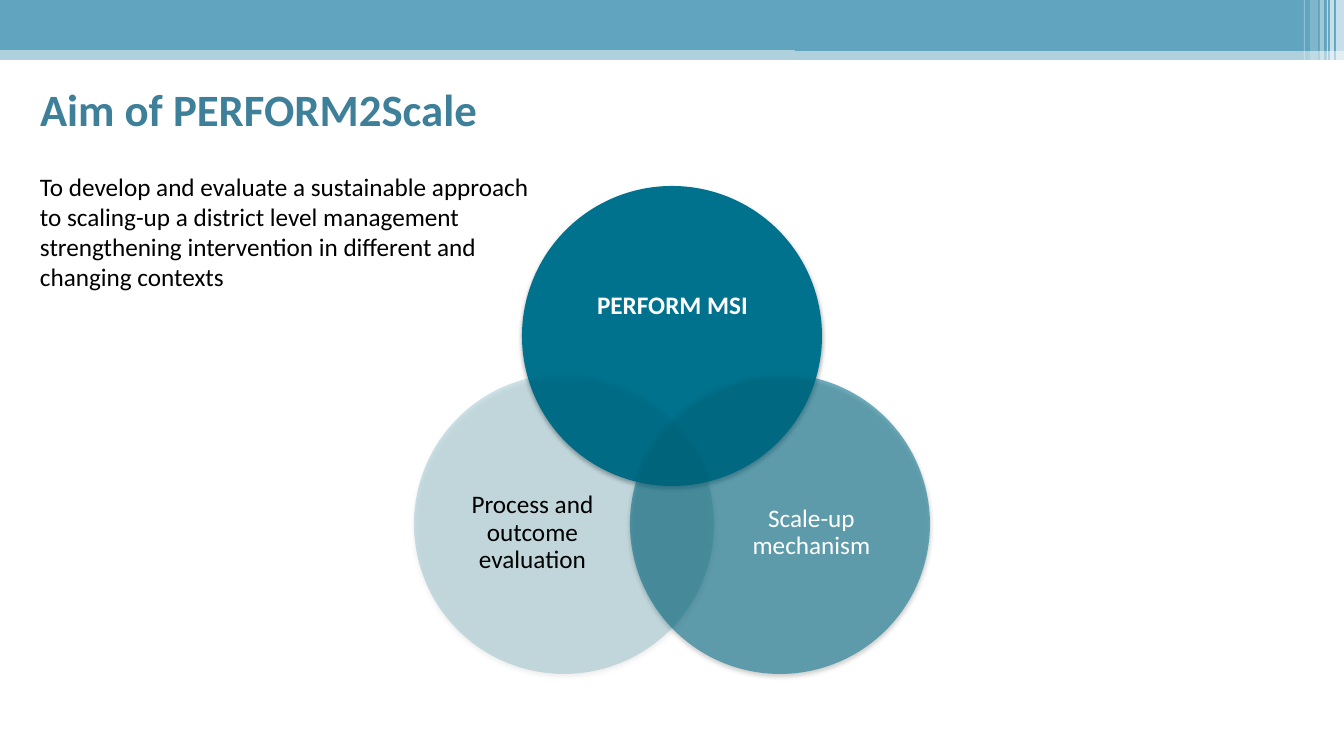
"""Build the slide on the aim of PERFORM2Scale with its three overlapping circles."""
from dataclasses import dataclass

from lxml.etree import SubElement
from pptx import Presentation
from pptx.dml.color import RGBColor
from pptx.enum.shapes import MSO_SHAPE as Preset
from pptx.enum.text import MSO_ANCHOR as Anchor, PP_ALIGN as Align
from pptx.oxml.ns import qn
from pptx.util import Emu, Pt

EMU_PER_PX = 914400 / 100.8
WIDTH, HEIGHT = 1344, 756


@dataclass(frozen=True)
class Theme:
    font: str = "Calibri"
    band: str = "61A4BF"
    circle: str = "01728D"
    title: str = "3E7F9A"
    dark: str = "000000"
    light: str = "FFFFFF"
    title_size: int = 32
    body_size: int = 18


def px(length):
    return Emu(round(length * EMU_PER_PX))


def set_all(target, values):
    for name, value in values.items():
        setattr(target, name, value)


class SlideBuilder:
    def __init__(self, slide, theme):
        self.slide = slide
        self.theme = theme

    def shape(self, preset, box, color, opacity=100):
        shape = self.slide.shapes.add_shape(preset, *map(px, box))
        shape.shadow.inherit = False
        shape.line.fill.background()
        shape.fill.solid()
        shape.fill.fore_color.rgb = RGBColor.from_string(color)
        if opacity < 100:
            fill_color = shape._element.spPr.find(".//" + qn("a:srgbClr"))
            SubElement(fill_color, qn("a:alpha"), val=str(opacity * 1000))
        return shape

    def bar(self, box, color, opacity=100):
        self.shape(Preset.RECTANGLE, box, color, opacity)

    def circle(self, left, top, diameter, opacity):
        box = (left, top, diameter, diameter)
        shape = self.shape(Preset.OVAL, box, self.theme.circle, opacity)
        effects = shape._element.spPr.find(qn("a:effectLst"))
        shadow = SubElement(effects, qn("a:outerShdw"), blurRad=str(Pt(3.1)),
                            dist=str(Pt(1.8)), dir="5400000", rotWithShape="0")
        shadow_color = SubElement(shadow, qn("a:srgbClr"), val=self.theme.dark)
        SubElement(shadow_color, qn("a:alpha"), val="35000")

    def fill_text(self, shape, box, text, color, size, bold=False,
                  align=Align.LEFT, anchor=Anchor.TOP, spacing=1.0):
        set_all(shape, dict(zip(("left", "top", "width", "height"), map(px, box))))
        frame = shape.text_frame
        set_all(frame, {"word_wrap": True, "vertical_anchor": anchor,
                        "margin_left": 0, "margin_right": 0,
                        "margin_top": 0, "margin_bottom": 0})
        frame.text = text
        paragraph = frame.paragraphs[0]
        set_all(paragraph, {"alignment": align, "line_spacing": spacing,
                            "space_before": Pt(0)})
        font = paragraph.runs[0].font
        set_all(font, {"name": self.theme.font, "size": Pt(size), "bold": bold})
        font.color.rgb = RGBColor.from_string(color)

    def title(self, box, text):
        self.fill_text(self.slide.shapes.title, box, text, self.theme.title,
                       self.theme.title_size, bold=True)

    def text(self, box, text, color, **style):
        shape = self.slide.shapes.add_textbox(*map(px, box))
        self.fill_text(shape, box, text, color, self.theme.body_size, **style)

    def label(self, box, text, color, bold=False):
        self.text(box, text, color, bold=bold, align=Align.CENTER,
                  anchor=Anchor.MIDDLE, spacing=0.9)


def main():
    presentation = Presentation()
    set_all(presentation, {"slide_width": px(WIDTH), "slide_height": px(HEIGHT)})
    slide = presentation.slides.add_slide(presentation.slide_layouts[5])
    theme = Theme()
    builder = SlideBuilder(slide, theme)

    builder.bar((0, 50, WIDTH, 10), theme.band, 50)
    for box in ((0, 0, WIDTH, 34), (0, 34, WIDTH, 16), (795, 41, 549, 10)):
        builder.bar(box, theme.band)
    stripes = ((1336, 8, 69, 65), (1330, 4, 69, 65), (1327, 1, 69, 60),
               (1320, 4, 69, 40), (1310, 8, 65, 20), (1304, 1, 65, 30))
    for left, width, height, opacity in stripes:
        builder.bar((left, 0, width, height), theme.light, opacity)

    diameter, shift = 300, 108
    middle = (WIDTH - diameter) // 2
    builder.circle(middle, 186, diameter, 100)
    builder.label((595, 259, 155, 95), "PERFORM MSI", theme.light, bold=True)
    lower_circles = (
        (shift, 55, 748, "Scale-up mechanism", theme.light),
        (-shift, 19, 469, "Process and outcome evaluation", theme.dark),
    )
    for offset, opacity, label_left, text, color in lower_circles:
        builder.circle(middle + offset, 374, diameter, opacity)
        builder.label((label_left, 475, 127, 116), text, color)

    builder.title((40, 82, 514, 55), "Aim of PERFORM2Scale")
    builder.text((40, 171, 514, 121),
                 "To develop and evaluate a sustainable approach to scaling-up "
                 "a district level management strengthening intervention in "
                 "different and changing contexts", theme.dark)
    presentation.save("out.pptx")


if __name__ == "__main__":
    main()
